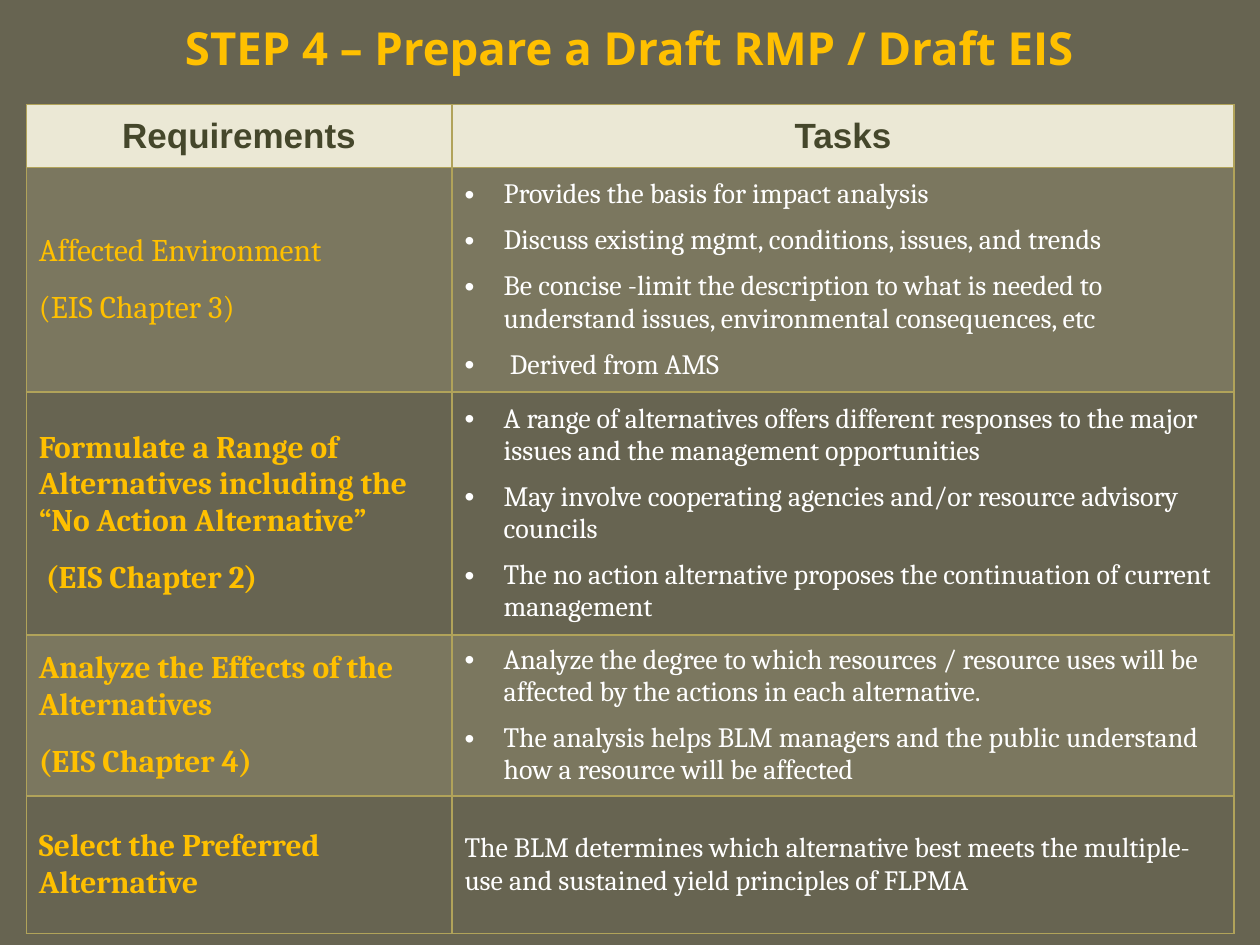
import pptx
import pptx.util
import pptx.dml.color
import pptx.enum.text
import pptx.oxml
import pptx.oxml.ns
from lxml import etree

Cm, Pt = pptx.util.Cm, pptx.util.Pt
Align = pptx.enum.text.PP_ALIGN
Anchor = pptx.enum.text.MSO_ANCHOR
RGB = pptx.dml.color.RGBColor.from_string
qn = pptx.oxml.ns.qn

hues = {"back": "676451", "gold": "FFC000", "white": "FFFFFF", "head": "EBE8D5",
        "dark": "45472B", "band": "CEC597", "line": "B1A35A"}


def write(frame, text, font="Cambria", size=16, hue="white", bold=False,
          align=Align.LEFT, gap=0, dots=False):
    """Write each line of text as a paragraph."""
    for i, line in enumerate(text.split("\n")):
        para = frame.paragraphs[0] if i == 0 else frame.add_paragraph()
        para.alignment = align
        para.space_before = Pt(gap if i else 0)
        para.space_after = Pt(gap)
        if dots:
            props = para._p.get_or_add_pPr()
            props.set("marL", str(Cm(0.79)))
            props.set("indent", str(-Cm(0.79)))
            etree.SubElement(props, qn("a:buFont"), typeface="Arial")
            etree.SubElement(props, qn("a:buChar"), char="•")
        run = para.add_run()
        run.text = line
        run.font.name, run.font.size, run.font.bold = font, Pt(size), bold
        run.font.color.rgb = RGB(hues[hue])


def edge(cell):
    """Draw a thin line on all four sides of a cell."""
    props = cell._tc.get_or_add_tcPr()
    for side in ("lnL", "lnR", "lnT", "lnB"):
        line = etree.SubElement(props, qn("a:" + side), w=str(Pt(1)))
        fill = etree.SubElement(line, qn("a:solidFill"))
        etree.SubElement(fill, qn("a:srgbClr"), val=hues["line"])


# Slide and background
deck = pptx.Presentation()
deck.slide_width, deck.slide_height = Cm(25.4), Cm(19.05)
slide = deck.slides.add_slide(deck.slide_layouts[6])
slide.background.fill.solid()
slide.background.fill.fore_color.rgb = RGB(hues["back"])

# Title
title = slide.shapes.add_textbox(0, 0, deck.slide_width, Cm(1.9)).text_frame
title.word_wrap = True
title.vertical_anchor = Anchor.MIDDLE
write(title, "STEP 4 – Prepare a Draft RMP / Draft EIS", font="Open Sans",
      size=26, hue="gold", bold=True, align=Align.CENTER)

# Table text: requirement, tasks
rows = [
    ("Requirements", "Tasks"),
    ("Affected Environment\n(EIS Chapter 3)",
     "Provides the basis for impact analysis\n"
     "Discuss existing mgmt, conditions, issues, and trends\n"
     "Be concise -limit the description to what is needed to understand issues, "
     "environmental consequences, etc\n"
     " Derived from AMS"),
    ("Formulate a Range of Alternatives including the “No Action Alternative”\n"
     " (EIS Chapter 2)",
     "A range of alternatives offers different responses to the major issues "
     "and the management opportunities\n"
     "May involve cooperating agencies and/or resource advisory councils\n"
     "The no action alternative proposes the continuation of current management"),
    ("Analyze the Effects of the Alternatives\n(EIS Chapter 4)",
     "Analyze the degree to which resources / resource uses will be affected "
     "by the actions in each alternative.\n"
     "The analysis helps BLM managers and the public understand how a resource "
     "will be affected"),
    ("Select the Preferred Alternative",
     "The BLM determines which alternative best meets the multiple-use and "
     "sustained yield principles of FLPMA"),
]
wide = [8.58, 15.77]
high = [1.27, 4.52, 4.9, 3.25, 2.77]

# Table grid
grid = slide.shapes.add_table(len(rows), 2, Cm(0.53), Cm(2.11),
                              Cm(sum(wide)), Cm(sum(high))).table
grid.first_row = grid.horz_banding = False
for col, width in zip(grid.columns, wide):
    col.width = Cm(width)
for row, height in zip(grid.rows, high):
    row.height = Cm(height)

# Cells
for r, texts in enumerate(rows):
    for c, text in enumerate(texts):
        cell = grid.cell(r, c)
        cell.vertical_anchor = Anchor.MIDDLE
        edge(cell)
        # Fill: pale header, then every other row tinted
        if r == 0 or r % 2:
            cell.fill.solid()
            cell.fill.fore_color.rgb = RGB(hues["band" if r else "head"])
        else:
            cell.fill.background()
        if r % 2:
            tint = cell._tc.tcPr.find(".//" + qn("a:srgbClr") + "[@val='CEC597']")
            etree.SubElement(tint, qn("a:alpha"), val="20000")
        # Text
        if r == 0:
            write(cell.text_frame, text, font="Arial", size=20, hue="dark",
                  bold=True, align=Align.CENTER, gap=6)
        elif c == 0:
            write(cell.text_frame, text, size=18, hue="gold", bold=r > 1, gap=6)
        else:
            write(cell.text_frame, text, gap=4, dots="\n" in text)

deck.save("out.pptx")
